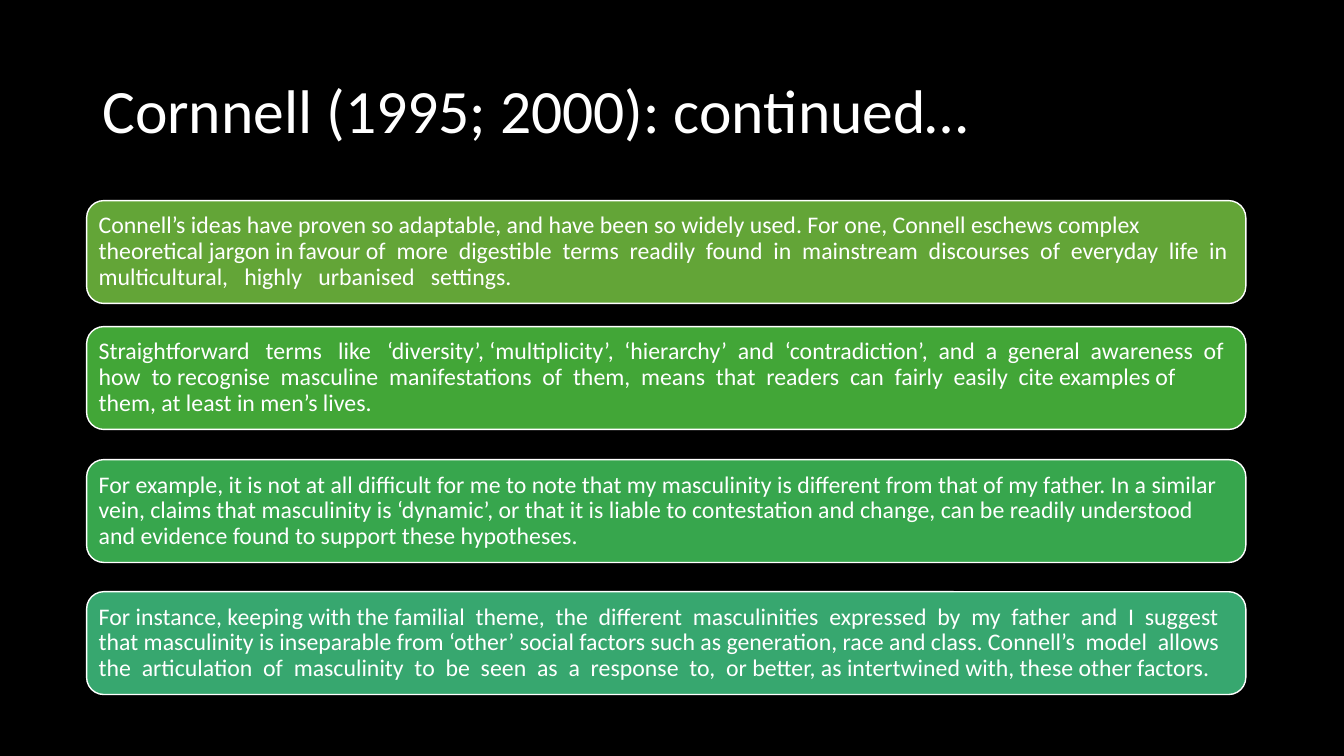
from dataclasses import dataclass

from pptx import Presentation
from pptx.dml.color import RGBColor
from pptx.enum.shapes import MSO_SHAPE
from pptx.enum.text import MSO_ANCHOR, PP_ALIGN
from pptx.util import Pt

ROUNDED = MSO_SHAPE.ROUNDED_RECTANGLE
MIDDLE = MSO_ANCHOR.MIDDLE
LEFT = PP_ALIGN.LEFT
BLANK_LAYOUT = 6


@dataclass(frozen=True)
class Theme:
    font: str = "Calibri"
    background: str = "000000"
    ink: str = "FFFFFF"
    greens: tuple = ("63A537", "42A637", "37A64D", "37A76F")
    title_size: float = 44
    body_size: float = 17
    line_spacing: float = 0.9
    outline: float = 1


THEME = Theme()

TITLE = "Cornnell (1995; 2000): continued…"
TITLE_BOX = (66, 28.8, 828, 104.4)

# The spacing inside the sentences is part of the quoted wording.
STATEMENTS = (
    "Connell’s ideas have proven so adaptable, and have been so widely used. "
    "For one, Connell eschews complex theoretical jargon in favour of  more  "
    "digestible  terms  readily  found  in  mainstream  discourses  of  everyday  "
    "life  in multicultural,   highly   urbanised   settings.",
    "Straightforward   terms   like   ‘diversity’, ‘multiplicity’,  ‘hierarchy’  "
    "and  ‘contradiction’,  and  a  general  awareness  of  how  to recognise  "
    "masculine  manifestations  of  them,  means  that  readers  can  fairly  "
    "easily  cite examples of them, at least in men’s lives.",
    "For example, it is not at all difficult for me to note that my masculinity "
    "is different from that of my father. In a similar vein, claims that "
    "masculinity is ‘dynamic’, or that it is liable to contestation and change, "
    "can be readily understood and evidence found to support these hypotheses.",
    "For instance, keeping with the familial  theme,  the  different  "
    "masculinities  expressed  by  my  father  and  I  suggest  that masculinity "
    "is inseparable from ‘other’ social factors such as generation, race and "
    "class. Connell’s  model  allows  the  articulation  of  masculinity  to  be  "
    "seen  as  a  response  to,  or better, as intertwined with, these other "
    "factors.",
)
STACK_BOX = (61.92, 143.28, 828, 352.8)
PANEL_OFFSETS = (0, 90, 185.04, 279.36)
PANEL_HEIGHT = 73.44
PANEL_MARGIN = 5.05


def color(value):
    return RGBColor.from_string(value)


def write(shape, text, size, margins):
    """Fill a shape with one left-aligned, vertically centred paragraph."""
    frame = shape.text_frame
    frame.word_wrap = True
    frame.vertical_anchor = MIDDLE
    side, end = margins
    frame.margin_left = frame.margin_right = Pt(side)
    frame.margin_top = frame.margin_bottom = Pt(end)
    para = frame.paragraphs[0]
    para.alignment = LEFT
    para.line_spacing = THEME.line_spacing
    span = para.add_run()
    span.text = text
    span.font.name = THEME.font
    span.font.size = Pt(size)
    span.font.color.rgb = color(THEME.ink)


def add_title(page, box):
    shape = page.shapes.add_textbox(*map(Pt, box))
    write(shape, TITLE, size=THEME.title_size, margins=(7.2, 3.6))


def add_panel(page, box, text, fill):
    panel = page.shapes.add_shape(ROUNDED, *map(Pt, box))
    panel.shadow.inherit = False
    panel.fill.solid()
    panel.fill.fore_color.rgb = color(fill)
    panel.line.color.rgb = color(THEME.ink)
    panel.line.width = Pt(THEME.outline)
    write(panel, text, size=THEME.body_size, margins=(PANEL_MARGIN, PANEL_MARGIN))


def add_statements(page, box):
    left, top, width, _ = box
    for offset, text, fill in zip(PANEL_OFFSETS, STATEMENTS, THEME.greens):
        add_panel(page, (left, top + offset, width, PANEL_HEIGHT), text, fill)


def main():
    deck = Presentation()
    deck.slide_width, deck.slide_height = Pt(960), Pt(540)
    page = deck.slides.add_slide(deck.slide_layouts[BLANK_LAYOUT])
    page.background.fill.solid()
    page.background.fill.fore_color.rgb = color(THEME.background)
    add_title(page, TITLE_BOX)
    add_statements(page, STACK_BOX)
    deck.save("out.pptx")


if __name__ == "__main__":
    main()
